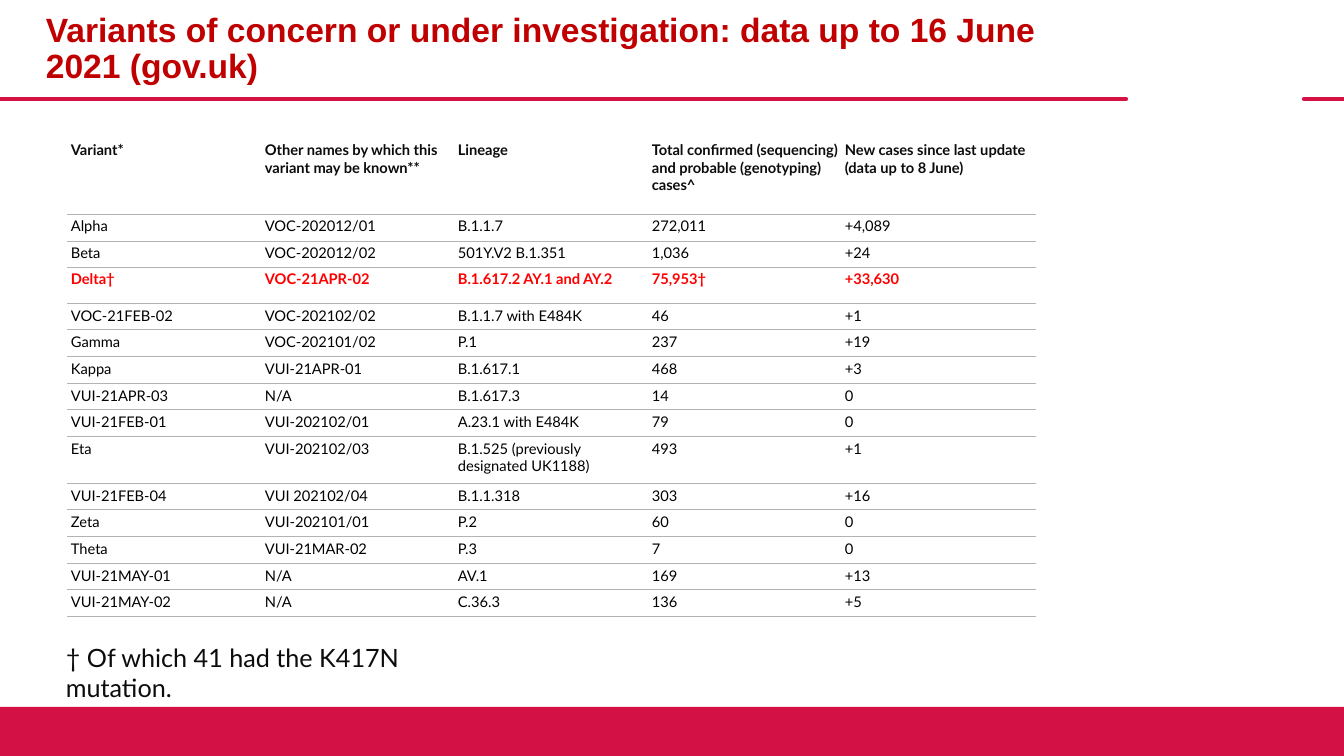
from lxml import etree
from pptx import Presentation
from pptx.dml.color import RGBColor
from pptx.enum.shapes import MSO_CONNECTOR, MSO_SHAPE
from pptx.enum.text import MSO_ANCHOR
from pptx.oxml import parse_xml
from pptx.oxml.ns import nsdecls, qn
from pptx.util import Emu, Pt

STRAIGHT = MSO_CONNECTOR.STRAIGHT
RECTANGLE = MSO_SHAPE.RECTANGLE
MIDDLE = MSO_ANCHOR.MIDDLE

PX = 914400 / 100.8
CRIMSON = "D31145"
INK = "0B0C0C"
RULE_GREY = "B1B4B6"

HEADINGS = (
    "Variant*",
    "Other names by which this variant may be known**",
    "Lineage",
    "Total confirmed (sequencing) and probable (genotyping) cases^",
    "New cases since last update (data up to 8 June)",
)
VARIANTS = [
    ("Alpha", "VOC-202012/01", "B.1.1.7", "272,011", "+4,089"),
    ("Beta", "VOC-202012/02", "501Y.V2 B.1.351", "1,036", "+24"),
    ("Delta†", "VOC-21APR-02", "B.1.617.2 AY.1 and AY.2", "75,953†", "+33,630"),
    ("VOC-21FEB-02", "VOC-202102/02", "B.1.1.7 with E484K", "46", "+1"),
    ("Gamma", "VOC-202101/02", "P.1", "237", "+19"),
    ("Kappa", "VUI-21APR-01", "B.1.617.1", "468", "+3"),
    ("VUI-21APR-03", "N/A", "B.1.617.3", "14", "0"),
    ("VUI-21FEB-01", "VUI-202102/01", "A.23.1 with E484K", "79", "0"),
    ("Eta", "VUI-202102/03", "B.1.525 (previously designated UK1188)", "493", "+1"),
    ("VUI-21FEB-04", "VUI 202102/04", "B.1.1.318", "303", "+16"),
    ("Zeta", "VUI-202101/01", "P.2", "60", "0"),
    ("Theta", "VUI-21MAR-02", "P.3", "7", "0"),
    ("VUI-21MAY-01", "N/A", "AV.1", "169", "+13"),
    ("VUI-21MAY-02", "N/A", "C.36.3", "136", "+5"),
]
ROW_EDGES = [138, 214, 241, 267, 304, 330, 357, 384, 410, 437, 484, 510, 537, 564, 590, 617]
COLUMN_EDGES = [68, 262, 455, 649, 842, 1036]


def color(value):
    return RGBColor.from_string(value)


def add_span(frame, text, font, size, ink, bold):
    span = frame.paragraphs[0].add_run()
    span.text = text
    span.font.name = font
    span.font.size = Pt(size)
    span.font.bold = bold
    span.font.color.rgb = color(ink)


deck = Presentation()
deck.slide_width = Emu(round(1344 * PX))
deck.slide_height = Emu(round(756 * PX))
page = deck.slides.add_slide(deck.slide_layouts[6])

for start, end in [(0, 1126), (1304, 1344)]:
    left, top, right = [Emu(round(n * PX)) for n in (start, 99, end)]
    rule = page.shapes.add_connector(STRAIGHT, left, top, right, top)
    rule.line.color.rgb = color(CRIMSON)
    rule.line.width = Pt(3)
    rule.line._get_or_add_ln().set("cap", "rnd")
    etree.SubElement(rule._element.spPr, qn("a:effectLst"))

footer = page.shapes.add_shape(RECTANGLE, *[Emu(round(n * PX)) for n in (0, 707, 1344, 49)])
footer.shadow.inherit = False
footer.fill.solid()
footer.fill.fore_color.rgb = color(CRIMSON)
footer.line.fill.background()

title = page.shapes.add_textbox(*[Emu(round(n * PX)) for n in (36, 0, 1090, 99)])
title.text_frame.word_wrap = True
title.text_frame.vertical_anchor = MIDDLE
title.text_frame.paragraphs[0].line_spacing = 0.9
add_span(
    title.text_frame,
    "Variants of concern or under investigation: data up to 16 June 2021 (gov.uk)",
    "Arial", 24, "C00000", True,
)

records = [HEADINGS] + VARIANTS
frame = page.shapes.add_table(
    len(records), len(HEADINGS), *[Emu(round(n * PX)) for n in (68, 138, 968, 479)]
)
table = frame.table
table.horz_banding = False
for column, left, right in zip(table.columns, COLUMN_EDGES, COLUMN_EDGES[1:]):
    column.width = Emu(round((right - left) * PX))
for row, top, bottom in zip(table.rows, ROW_EDGES, ROW_EDGES[1:]):
    row.height = Emu(round((bottom - top) * PX))

for index, record in enumerate(records):
    heading = index == 0
    delta = record[0] == "Delta†"
    ink = INK if heading else "FF0000" if delta else "000000"
    for cell, text in zip(table.rows[index].cells, record):
        cell.margin_left = cell.margin_right = Emu(round(3 * PX))
        cell.margin_top = cell.margin_bottom = Emu(round(3 * PX))
        for side in ["lnB"] if heading else ["lnT", "lnB"]:
            cell._tc.get_or_add_tcPr().append(parse_xml(
                f'<a:{side} {nsdecls("a")} w="{Pt(0.75)}"><a:solidFill>'
                f'<a:srgbClr val="{RULE_GREY}"/></a:solidFill></a:{side}>'
            ))
        cell.fill.solid()
        cell.fill.fore_color.rgb = color("FFFFFF")
        add_span(cell.text_frame, text, "Lato", 10.5, ink, heading or delta)

note = page.shapes.add_textbox(*[Emu(round(n * PX)) for n in (56, 637, 429, 40)])
note.text_frame.word_wrap = True
add_span(note.text_frame, "† Of which 41 had the K417N mutation.", "Lato", 18, INK, False)

deck.save("out.pptx")
